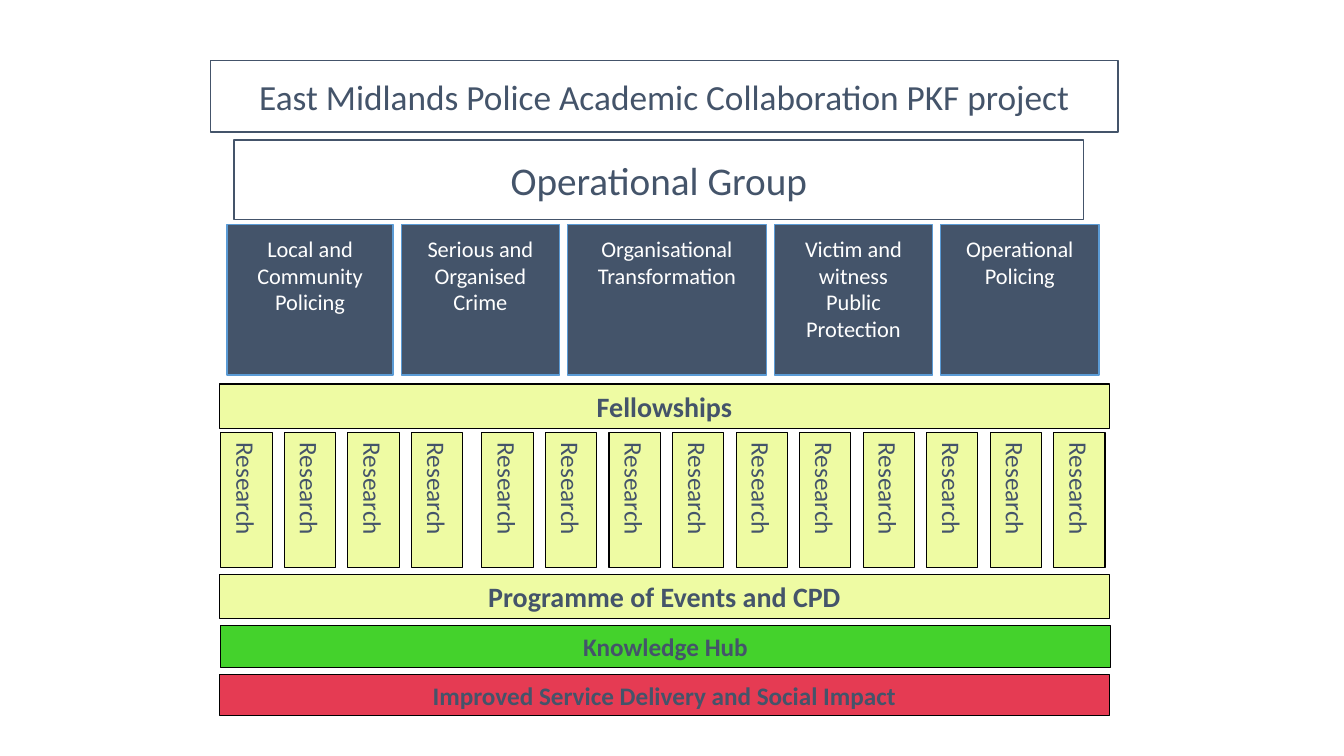
from pptx import Presentation
from pptx.dml.color import RGBColor
from pptx.enum.shapes import MSO_SHAPE
from pptx.enum.text import MSO_ANCHOR, PP_ALIGN
from pptx.util import Inches, Pt

SLATE, WHITE, BLUE, BLACK = "44546A", "FFFFFF", "5B9BD5", "000000"
LIME, GREEN, RED = "EEFBA3", "44D22C", "E53B53"

headings = [
    ("East Midlands Police Academic Collaboration PKF project", 2.09, 0.6, 9, 0.71, 25.2),
    ("Operational Group", 2.32, 1.39, 8.43, 0.79, 28),
]
themes = [
    ("Local and Community Policing", 1.65),
    ("Serious and Organised Crime", 1.57),
    ("Organisational Transformation", 1.97),
    ("Victim and witness Public Protection", 1.57),
    ("Operational Policing", 1.57),
]
bands = [
    ("Fellowships", 2.18, 3.81, 0.44, LIME, 20),
    ("Programme of Events and CPD", 2.18, 5.7, 0.44, LIME, 20),
    ("Knowledge Hub", 2.19, 6.21, 0.41, GREEN, 18),
    ("Improved Service Delivery and Social Impact", 2.18, 6.69, 0.41, RED, 18),
]
research_runs = [(2.19, 4), (4.78, 10)]
research_label = "Research"

THEME_LEFT, THEME_TOP, THEME_HEIGHT, THEME_GAP = 2.25, 2.23, 1.49, 0.08
BAND_WIDTH = 8.82
RESEARCH_TOP, RESEARCH_WIDTH, RESEARCH_HEIGHT, RESEARCH_STEP = 4.29, 0.51, 1.34, 0.63

presentation = Presentation()
presentation.slide_width = Inches(13.33)
presentation.slide_height = Inches(7.5)
slide = presentation.slides.add_slide(presentation.slide_layouts[6])


def paint(color_format, value):
    color_format.rgb = RGBColor.from_string(value)


def add_box(left, top, width, height, line, line_width, fill=None):
    box = slide.shapes.add_shape(
        MSO_SHAPE.RECTANGLE, Inches(left), Inches(top), Inches(width), Inches(height))
    box.shadow.inherit = False
    if fill:
        box.fill.solid()
        paint(box.fill.fore_color, fill)
    else:
        box.fill.background()
    paint(box.line.color, line)
    box.line.width = Pt(line_width)
    return box


def write(box, text, size, color=SLATE, bold=False, align=PP_ALIGN.CENTER,
          anchor=MSO_ANCHOR.MIDDLE, side=0.1, edge=0.05, direction="horz"):
    frame = box.text_frame
    frame.word_wrap = True
    frame.vertical_anchor = anchor
    frame.margin_left = frame.margin_right = Inches(side)
    frame.margin_top = frame.margin_bottom = Inches(edge)
    frame._txBody.bodyPr.set("vert", direction)
    paragraph = frame.paragraphs[0]
    paragraph.alignment = align
    run = paragraph.add_run()
    run.text = text
    run.font.name = "Calibri"
    run.font.size = Pt(size)
    run.font.bold = bold
    paint(run.font.color, color)


for heading, left, top, width, height, size in headings:
    write(add_box(left, top, width, height, SLATE, 1), heading, size)

theme_left = THEME_LEFT
for theme, width in themes:
    card = add_box(theme_left, THEME_TOP, width, THEME_HEIGHT, BLUE, 1, SLATE)
    write(card, theme, 16, color=WHITE, anchor=MSO_ANCHOR.TOP, side=0.2, edge=0.1)
    theme_left += width + THEME_GAP

for run_left, count in research_runs:
    for index in range(count):
        strip = add_box(run_left + index * RESEARCH_STEP, RESEARCH_TOP,
                        RESEARCH_WIDTH, RESEARCH_HEIGHT, BLACK, 0.75, LIME)
        write(strip, research_label, 18, align=PP_ALIGN.LEFT, edge=0.1, direction="eaVert")

for band, left, top, height, fill, size in bands:
    write(add_box(left, top, BAND_WIDTH, height, BLACK, 0.75, fill), band, size, bold=True)

presentation.save("out.pptx")
